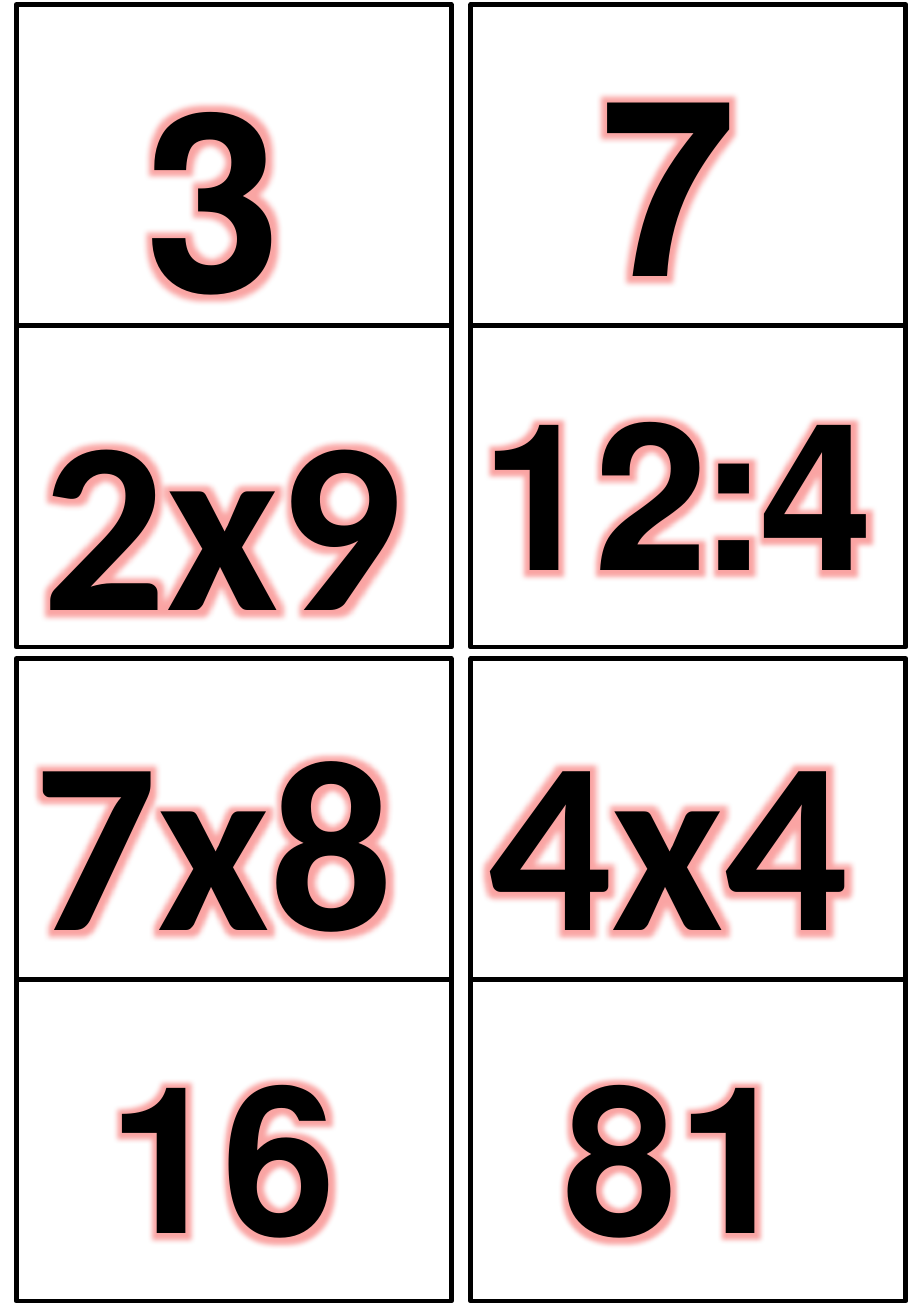
import lxml.etree
import pptx
import pptx.dml.color
import pptx.enum.shapes
import pptx.enum.text
import pptx.oxml
import pptx.oxml.ns
import pptx.util

PX = 9144  # EMU in one px, at 100 px to the inch
COLORS = {"paper": "FFFFFF", "ink": "000000", "glow": "F31D1A"}
CARD_W, CARD_H = 378, 558
CARD_LEFTS = (14, 409)
CARD_TOPS = (4, 572)
BIG, SMALL = 153, 128
TEXT_W = 427
TEXT_H = {BIG: 277, SMALL: 233}

# column, row, then (text, size, drop from the card's top) of both halves
CARDS = [
    (1, 0, ("7", BIG, 18), ("12:4", SMALL, 308)),
    (0, 0, ("3", BIG, 29), ("2x9", BIG, 308)),
    (1, 1, ("4x4", BIG, 18), ("81", SMALL, 316)),
    (0, 1, ("7x8", BIG, 18), ("16", SMALL, 316)),
]


def px(n):
    return pptx.util.Emu(n * PX)


def rgb(name):
    return pptx.dml.color.RGBColor.from_string(COLORS[name])


def add_glow(r, color, radius, alpha):
    """Put a soft glow of radius points and alpha percent round a run."""
    effects = pptx.oxml.parse_xml(
        f'<a:effectLst {pptx.oxml.ns.nsdecls("a")}>'
        f'<a:glow rad="{radius * 12700}"><a:srgbClr val="{COLORS[color]}">'
        f'<a:alpha val="{alpha * 1000}"/></a:srgbClr></a:glow></a:effectLst>')
    fill = r.font._element.find(pptx.oxml.ns.qn("a:solidFill"))
    fill.addnext(effects)


class Deck:
    def __init__(self, width, height):
        self.prs = pptx.Presentation()
        self.prs.slide_width, self.prs.slide_height = px(width), px(height)
        self.s = self.prs.slides.add_slide(self.prs.slide_layouts[6])
        self.font = "Calibri"
        self.line_width = pptx.util.Pt(3)

    def outline(self, sp):
        sp.line.color.rgb = rgb("ink")
        sp.line.width = self.line_width

    def frame(self, x, y, w, h):
        sp = self.s.shapes.add_shape(
            pptx.enum.shapes.MSO_SHAPE.RECTANGLE, px(x), px(y), px(w), px(h))
        sp.shadow.inherit = False
        sp.fill.solid()
        sp.fill.fore_color.rgb = rgb("paper")
        self.outline(sp)
        return sp

    def divider(self, frame):
        """Join the middles of the frame's left and right sides."""
        line = self.s.shapes.add_connector(
            pptx.enum.shapes.MSO_CONNECTOR.STRAIGHT, 0, 0, 0, 0)
        line.begin_connect(frame, 1)
        line.end_connect(frame, 3)
        self.outline(line)
        lxml.etree.SubElement(line._element.spPr, pptx.oxml.ns.qn("a:effectLst"))
        return line

    def card(self, x, y):
        frame = self.frame(x, y, CARD_W, CARD_H)
        self.s.shapes.add_group_shape([frame, self.divider(frame)])

    def text(self, text, x, y, w, h, size, color="ink", bold=True):
        sp = self.s.shapes.add_textbox(px(x), px(y), px(w), px(h))
        tf = sp.text_frame
        tf.word_wrap = True
        tf.auto_size = pptx.enum.text.MSO_AUTO_SIZE.SHAPE_TO_FIT_TEXT
        tf.margin_left = tf.margin_right = px(11)
        tf.margin_top = tf.margin_bottom = px(6)
        p = tf.paragraphs[0]
        p.alignment = pptx.enum.text.PP_ALIGN.CENTER
        p._p.get_or_add_pPr().set("rtl", "1")
        r = p.add_run()
        r.text = text
        r.font.name = self.font
        r.font.size = pptx.util.Pt(size)
        r.font.bold = bold
        r.font.color.rgb = rgb(color)
        add_glow(r, "glow", radius=8, alpha=40)


def main():
    deck = Deck(801, 1143)
    for column, row, *halves in CARDS:
        x, y = CARD_LEFTS[column], CARD_TOPS[row]
        deck.card(x, y)
        for (text, size, drop), shift in zip(halves, (42, 34)):
            deck.text(text, x - shift, y + drop, TEXT_W, TEXT_H[size], size)
    deck.prs.save("out.pptx")


if __name__ == "__main__":
    main()
